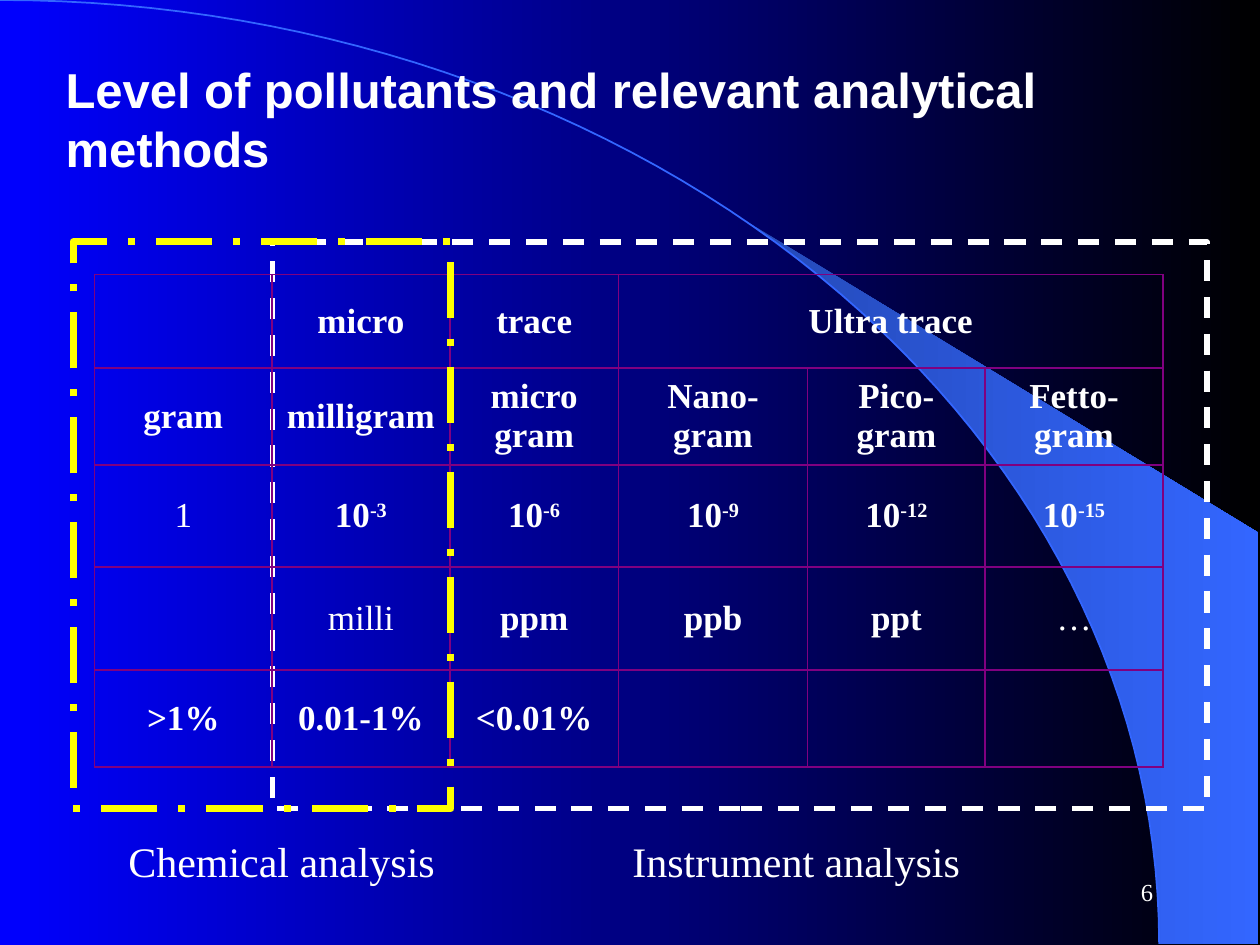
import math
import pptx
import pptx.util
import pptx.dml.color
import pptx.enum.dml
import pptx.enum.shapes
import pptx.enum.text
import pptx.oxml
import pptx.oxml.ns

Inches = pptx.util.Inches
Pt = pptx.util.Pt
ALIGN = pptx.enum.text.PP_ALIGN
ANCHOR = pptx.enum.text.MSO_ANCHOR
DASH = pptx.enum.dml.MSO_LINE

COLORS = {
    "white": "FFFFFF",
    "yellow": "FFFF00",
    "blue": "0000FF",
    "black": "000000",
    "swoosh_dark": "2449B6",
    "swoosh": "3366FF",
    "grid": "800080",
}
SERIF = "Times New Roman"
ARC_W, ARC_H = 9.2, 7.49

COLS = [1.41, 1.41, 1.34, 1.5, 1.41, 1.41]
ROWS = [0.74, 0.77, 0.81, 0.82, 0.77]
CELLS = [
    ["", "micro", "trace", "Ultra trace", "", ""],
    ["gram", "milligram", "micro gram", "Nano-gram", "Pico-gram", "Fetto-gram"],
    ["1", "10^-3", "10^-6", "10^-9", "10^-12", "10^-15"],
    ["", "milli", "ppm", "ppb", "ppt", "…"],
    [">1%", "0.01-1%", "<0.01%", "", "", ""],
]
REGULAR = {"1", "milli", "…"}


def rgb(name):
    return pptx.dml.color.RGBColor.from_string(COLORS[name])


def arc_points(start, end, steps=60):
    angles = [start + (end - start) * i / steps for i in range(steps + 1)]
    return [(ARC_W * math.sin(a), ARC_H * (1 - math.cos(a))) for a in angles]


class SlideBuilder:
    def __init__(self, prs):
        self.s = prs.slides.add_slide(prs.slide_layouts[5])

    def gradient(self, fill, first, last):
        fill.gradient()
        fill.gradient_angle = 0
        for stop, color in zip(fill.gradient_stops, (first, last)):
            stop.color.rgb = rgb(color)

    def run(self, p, text, size, font=SERIF, bold=False):
        r = p.add_run()
        r.text = text
        r.font.size = Pt(size)
        r.font.name = font
        r.font.bold = bold
        r.font.color.rgb = rgb("white")
        return r

    def title(self, text, x, y, w, h):
        sp = self.s.shapes.title
        sp.element.getparent().append(sp.element)
        sp.left, sp.top, sp.width, sp.height = map(Inches, (x, y, w, h))
        tf = sp.text_frame
        tf.word_wrap = True
        tf.auto_size = pptx.enum.text.MSO_AUTO_SIZE.NONE
        tf.vertical_anchor = ANCHOR.MIDDLE
        p = tf.paragraphs[0]
        p.alignment = ALIGN.LEFT
        self.run(p, text, 28, "Arial", True)

    def text(self, text, x, y, w, h, size, align=ALIGN.LEFT, anchor=ANCHOR.TOP):
        sp = self.s.shapes.add_textbox(*map(Inches, (x, y, w, h)))
        tf = sp.text_frame
        tf.word_wrap = True
        tf.vertical_anchor = anchor
        p = tf.paragraphs[0]
        p.alignment = align
        self.run(p, text, size)

    def outline(self, points, close):
        points = [(Inches(x), Inches(y)) for x, y in points]
        builder = self.s.shapes.build_freeform(*points[0])
        builder.add_line_segments(points[1:], close=close)
        sp = builder.convert_to_shape()
        sp.shadow.inherit = False
        return sp

    def swoosh(self, points):
        sp = self.outline(points, True)
        self.gradient(sp.fill, "swoosh_dark", "swoosh")
        sp.line.fill.background()

    def curve(self, points):
        sp = self.outline(points, False)
        sp.fill.background()
        sp.line.color.rgb = rgb("swoosh")
        sp.line.width = Pt(1)

    def frame(self, x, y, w, h, color, width, dash):
        sp = self.s.shapes.add_shape(
            pptx.enum.shapes.MSO_SHAPE.RECTANGLE, *map(Inches, (x, y, w, h)))
        sp.shadow.inherit = False
        sp.fill.background()
        sp.line.color.rgb = rgb(color)
        sp.line.width = Pt(width)
        sp.line.dash_style = dash

    def borders(self, cell):
        tc_pr = cell._tc.get_or_add_tcPr()
        for i, side in enumerate(("lnL", "lnR", "lnT", "lnB")):
            tc_pr.insert(i, pptx.oxml.parse_xml(
                f'<a:{side} {pptx.oxml.ns.nsdecls("a")} w="{Pt(1)}"><a:solidFill>'
                f'<a:srgbClr val="{COLORS["grid"]}"/></a:solidFill></a:{side}>'))

    def table(self, x, y, cols, rows, cells):
        table = self.s.shapes.add_table(
            len(rows), len(cols),
            *map(Inches, (x, y, sum(cols), sum(rows)))).table
        table.first_row = table.horz_banding = False
        for column, width in zip(table.columns, cols):
            column.width = Inches(width)
        for row, height, texts in zip(table.rows, rows, cells):
            row.height = Inches(height)
            for cell, text in zip(row.cells, texts):
                cell.fill.background()
                self.borders(cell)
                cell.vertical_anchor = ANCHOR.MIDDLE
                p = cell.text_frame.paragraphs[0]
                p.alignment = ALIGN.CENTER
                base, _, power = text.partition("^")
                if base:
                    self.run(p, base, 20, bold=base not in REGULAR)
                if power:
                    r = self.run(p, power, 20, bold=True)
                    r.font._element.set("baseline", "30000")
        table.cell(0, 3).merge(table.cell(0, 5))


def main():
    prs = pptx.Presentation()
    prs.slide_width, prs.slide_height = Inches(10), Inches(7.5)
    b = SlideBuilder(prs)
    b.gradient(b.s.background.fill, "blue", "black")

    swoosh_start = math.asin(5.89 / ARC_W)
    b.swoosh(arc_points(swoosh_start, math.pi / 2) + [(9.99, ARC_H), (9.99, 4.23)])
    b.curve(arc_points(0, math.pi / 2))

    b.text("6", 7.17, 6.83, 2.08, 0.5, 14, ALIGN.RIGHT, ANCHOR.MIDDLE)
    b.title("Level of pollutants and relevant analytical methods",
            0.42, 0.5, 8.83, 0.88)
    b.frame(2.16, 1.92, 7.42, 4.5, "white", 3, DASH.DASH)
    b.table(0.75, 2.18, COLS, ROWS, CELLS)
    b.text("Instrument analysis", 4.92, 6.58, 3.08, 0.5, 24)
    b.frame(0.58, 1.92, 3, 4.5, "yellow", 4, DASH.LONG_DASH_DOT)
    b.text("Chemical analysis", 0.92, 6.58, 3.08, 0.5, 24)
    prs.save("out.pptx")


if __name__ == "__main__":
    main()
